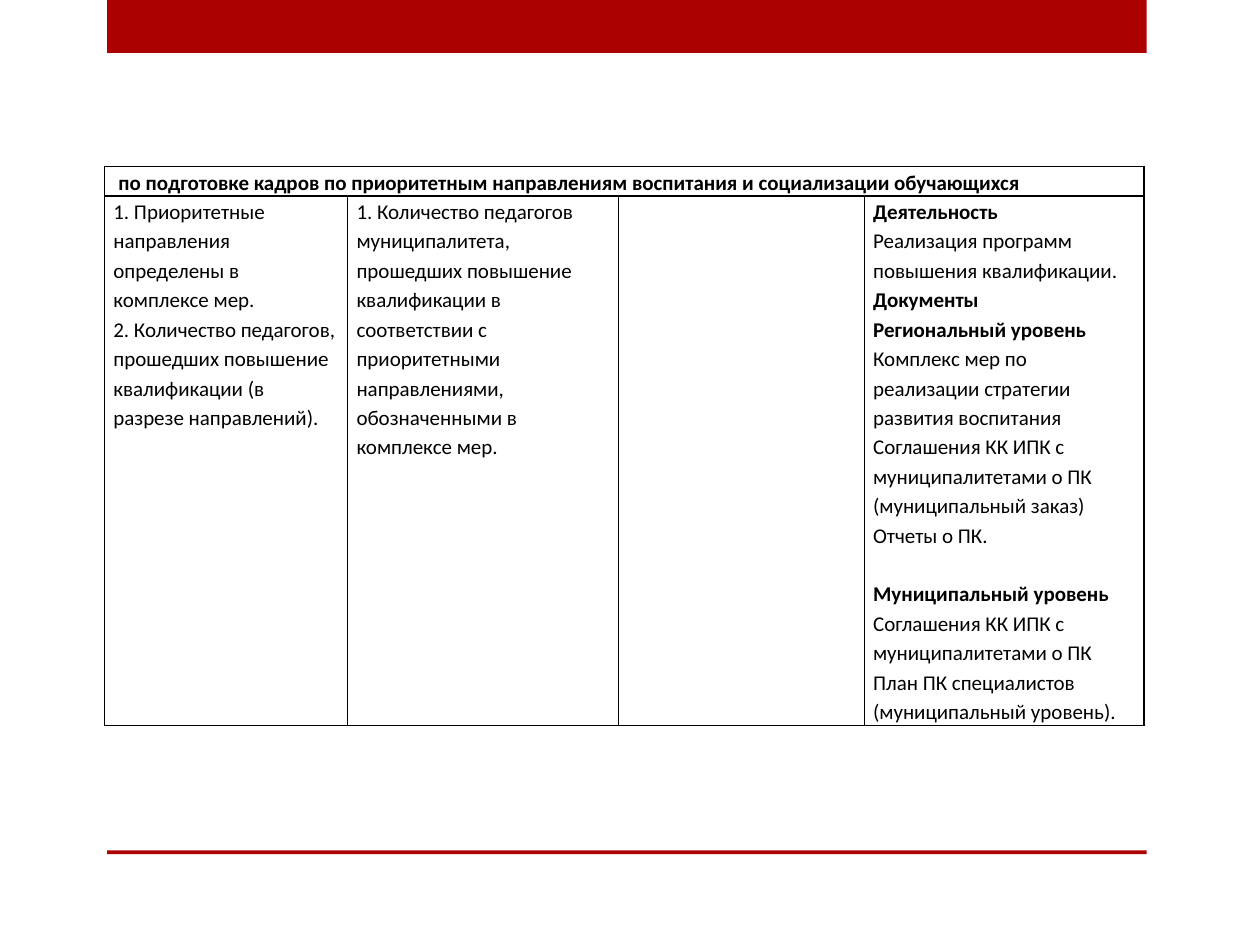
import pptx
import pptx.util
import pptx.dml.color
import pptx.enum.shapes
import pptx.oxml
import pptx.oxml.ns
from pptx.util import Inches

RED = "AD0101"
BLACK = "000000"
WHITE = "FFFFFF"

HEAD = "по подготовке кадров по приоритетным направлениям воспитания и социализации обучающихся"
GOALS = [
    ("1. Приоритетные направления определены в комплексе мер.", {}),
    ("2. Количество педагогов, прошедших повышение квалификации (в разрезе направлений).", {}),
]
COUNTS = [
    ("1. Количество педагогов муниципалитета, прошедших повышение квалификации в соответствии "
     "с приоритетными направлениями, обозначенными в комплексе мер.", {}),
]
WORK = [
    ("Деятельность", {"bold": True}),
    ("Реализация программ повышения квалификации.", {}),
    ("Документы", {"bold": True}),
    ("Региональный уровень", {"bold": True}),
    ("Комплекс мер по реализации стратегии развития воспитания", {}),
    ("Соглашения КК ИПК с муниципалитетами о ПК (муниципальный заказ)", {}),
    ("Отчеты о ПК.", {}),
    ("Муниципальный уровень", {"bold": True, "before": 16.8}),
    ("Соглашения КК ИПК с муниципалитетами о ПК", {}),
    ("План ПК специалистов (муниципальный уровень).", {}),
]


def color(value):
    return pptx.dml.color.RGBColor.from_string(value)


def write(para, text, size=12, bold=False, before=0, tint=BLACK, face="Calibri"):
    para.line_spacing = 1.15
    para.space_before = pptx.util.Pt(before)
    run = para.add_run()
    run.text = text
    run.font.size = pptx.util.Pt(size)
    run.font.bold = bold
    run.font.name = face
    run.font.color.rgb = color(tint)


class Deck:
    def __init__(self):
        self.file = pptx.Presentation()
        self.file.slide_width = Inches(10)
        self.file.slide_height = Inches(7.5)
        self.slide = self.file.slides.add_slide(self.file.slide_layouts[6])

    def bar(self, top, height):
        kind = pptx.enum.shapes.MSO_SHAPE.RECTANGLE
        shape = self.slide.shapes.add_shape(
            kind, Inches(0.85), Inches(top), Inches(8.25), Inches(height))
        shape.shadow.inherit = False
        shape.fill.solid()
        shape.fill.fore_color.rgb = color(RED)
        shape.line.fill.background()

    def border(self, cell):
        props = cell._tc.get_or_add_tcPr()
        for side in "LRTB":
            props.append(pptx.oxml.parse_xml(
                f'<a:ln{side} {pptx.oxml.ns.nsdecls("a")} w="12700">'
                f'<a:solidFill><a:srgbClr val="{BLACK}"/></a:solidFill></a:ln{side}>'))

    def fill(self, cell, items, left=0.07):
        cell.margin_left = Inches(left)
        cell.margin_right = Inches(0.07)
        cell.margin_top = cell.margin_bottom = 0
        frame = cell.text_frame
        for i, (text, form) in enumerate(items):
            para = frame.add_paragraph() if i else frame.paragraphs[0]
            write(para, text, **form)

    def table(self, left, top, widths, heights):
        grid = self.slide.shapes.add_table(
            len(heights), len(widths), Inches(left), Inches(top),
            Inches(sum(widths)), Inches(sum(heights))).table
        grid.first_row = grid.horz_banding = False
        for col, width in zip(grid.columns, widths):
            col.width = Inches(width)
        for row, height in zip(grid.rows, heights):
            row.height = Inches(height)
        for cell in grid.iter_cells():
            self.border(cell)
            cell.fill.solid()
            cell.fill.fore_color.rgb = color(WHITE)
        return grid


def main():
    deck = Deck()
    deck.bar(0, 0.42)
    deck.bar(6.75, 0.03)
    grid = deck.table(0.83, 1.32, [1.93, 2.15, 1.95, 2.22], [0.23, 4.2])
    grid.cell(0, 0).merge(grid.cell(0, 3))
    deck.fill(grid.cell(0, 0), [(HEAD, {"bold": True})], left=0.11)
    for col, items in enumerate([GOALS, COUNTS, [], WORK]):
        deck.fill(grid.cell(1, col), items)
    deck.file.save("out.pptx")


if __name__ == "__main__":
    main()
